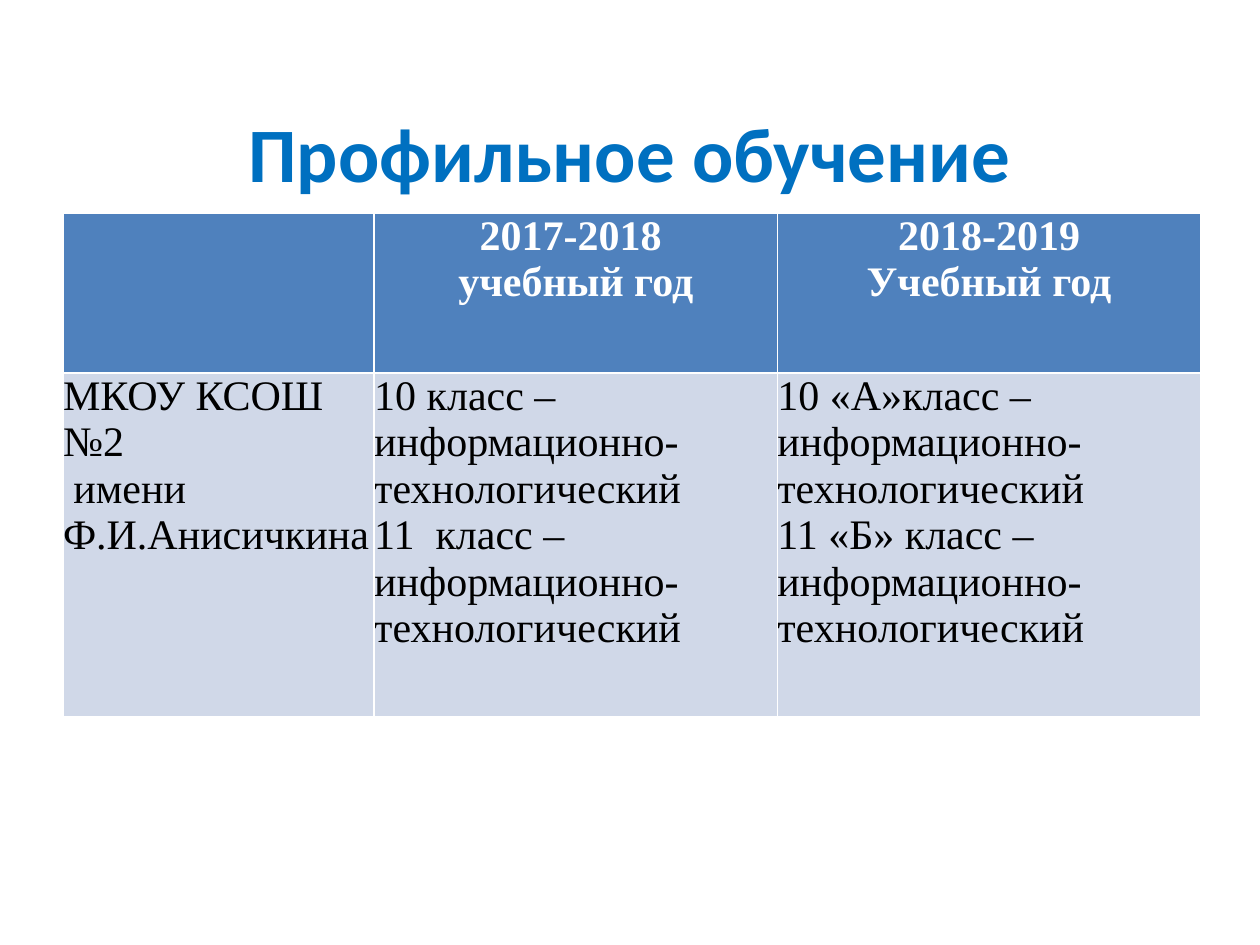
from pptx import Presentation
from pptx.dml.color import RGBColor
from pptx.enum.text import MSO_ANCHOR, PP_ALIGN
from pptx.util import Inches, Pt

COLORS = {"title": "0070C0", "header": "4F81BD", "body": "D0D8E8",
          "light": "FFFFFF", "dark": "000000"}


def write(frame, text, font, size, color, bold=False, align=PP_ALIGN.LEFT):
    """Fill a text frame, one paragraph per line of text."""
    frame.text = text
    for paragraph in frame.paragraphs:
        paragraph.alignment = align
        for run in paragraph.runs:
            run.font.name = font
            run.font.size = Pt(size)
            run.font.bold = bold
            run.font.color.rgb = RGBColor.from_string(COLORS[color])


presentation = Presentation()
presentation.slide_width = Inches(10)
presentation.slide_height = Inches(7.5)
slide = presentation.slides.add_slide(presentation.slide_layouts[5])
margin = Inches(0.5)

# Title
heading = slide.shapes.title
heading.left, heading.top = margin, Inches(0.86)
heading.width, heading.height = presentation.slide_width - 2 * margin, Inches(0.69)
heading.text_frame.vertical_anchor = MSO_ANCHOR.MIDDLE
write(heading.text_frame, "Профильное обучение", font="Calibri", size=44,
      color="title", bold=True, align=PP_ALIGN.CENTER)

# Study profiles by school year
profiles = [
    ["", "2017-2018 \nучебный год", "2018-2019\nУчебный год"],
    ["МКОУ КСОШ №2\n имени Ф.И.Анисичкина",
     "10 класс – информационно-технологический\n"
     "11  класс – информационно-технологический",
     "10 «А»класс – информационно-технологический\n"
     "11 «Б» класс – информационно-технологический"],
]
column_widths = [2.47, 3.2, 3.36]
row_heights = [1.27, 2.73]
schedule = slide.shapes.add_table(
    len(row_heights), len(column_widths), margin, Inches(1.69),
    Inches(sum(column_widths)), Inches(sum(row_heights))).table
for column, width in zip(schedule.columns, column_widths):
    column.width = Inches(width)

for row_index, (row, height) in enumerate(zip(schedule.rows, row_heights)):
    row.height = Inches(height)
    is_header = row_index == 0
    for cell, text in zip(row.cells, profiles[row_index]):
        cell.margin_left = cell.margin_right = 0
        cell.margin_top = cell.margin_bottom = 0
        cell.fill.solid()
        cell.fill.fore_color.rgb = RGBColor.from_string(
            COLORS["header" if is_header else "body"])
        write(cell.text_frame, text, font="Times New Roman", size=24,
              color="light" if is_header else "dark", bold=is_header,
              align=PP_ALIGN.CENTER if is_header else PP_ALIGN.LEFT)

presentation.save("out.pptx")
